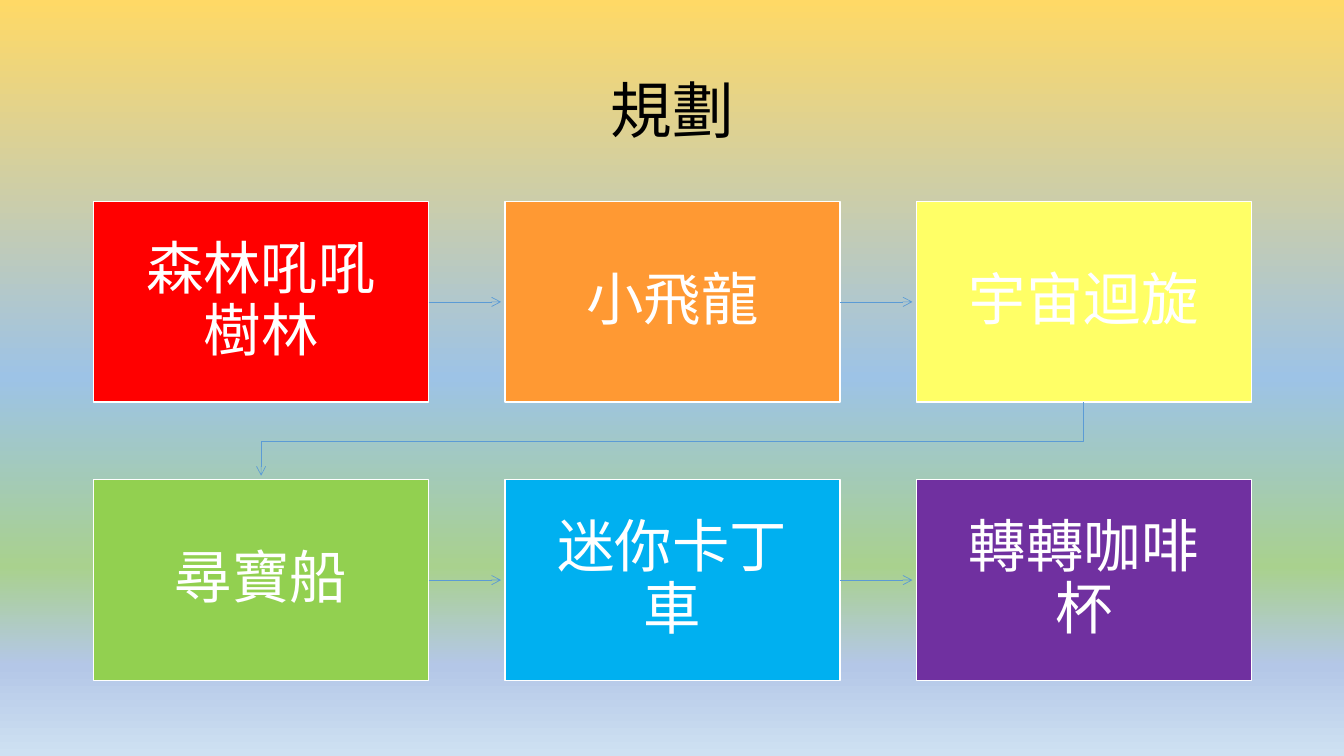
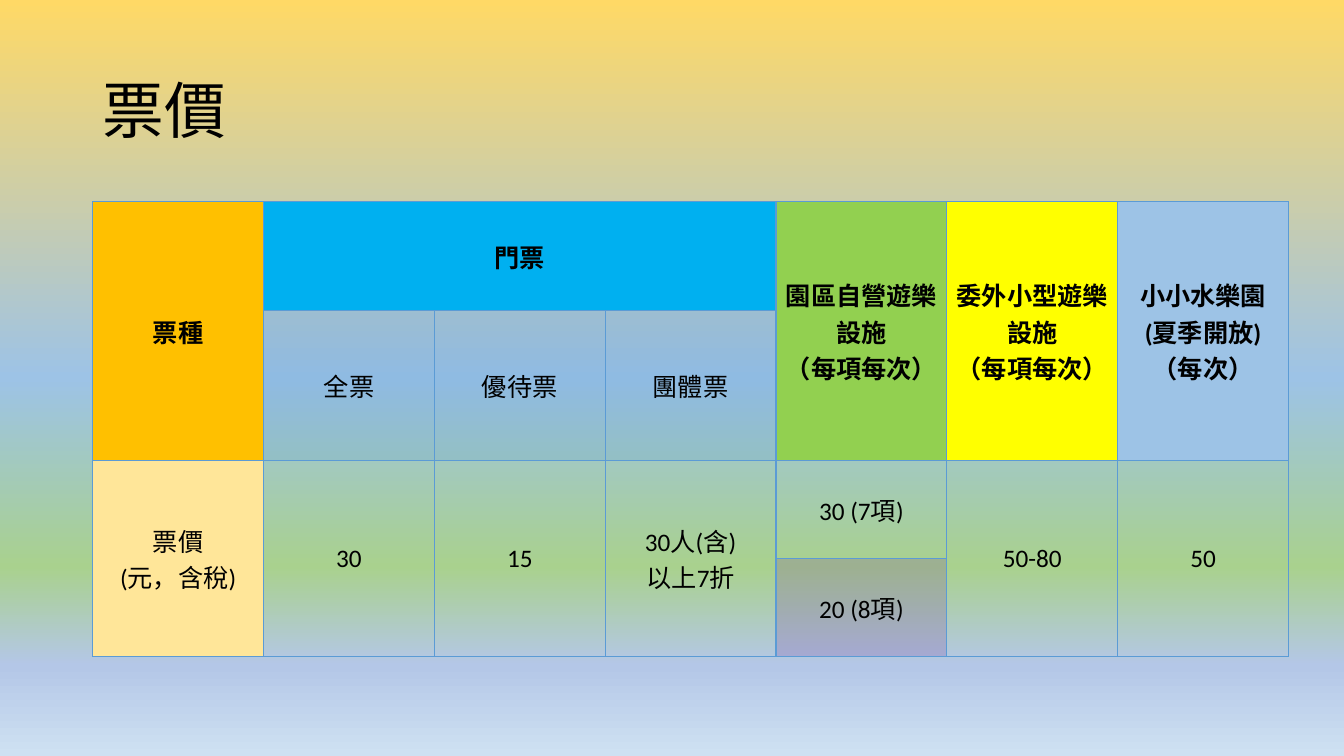
from lxml import etree
from pptx import Presentation
from pptx.dml.color import RGBColor
from pptx.enum.shapes import MSO_CONNECTOR, MSO_SHAPE
from pptx.enum.text import MSO_ANCHOR, PP_ALIGN
from pptx.oxml.ns import qn
from pptx.util import Inches, Pt

STRAIGHT = MSO_CONNECTOR.STRAIGHT
RECTANGLE = MSO_SHAPE.RECTANGLE
MIDDLE = MSO_ANCHOR.MIDDLE
LEFT, CENTER = PP_ALIGN.LEFT, PP_ALIGN.CENTER

BLACK, WHITE, BLUE = "000000", "FFFFFF", "5B9BD5"
PURPLE, GREEN, CYAN = "7030A0", "92D050", "00B0F0"
SKY = [(0, "FFD966"), (50, "9DC3E6"), (75, "A9D18E"), (88, "B4C7E7"), (100, "CEE1F2")]

RIDES = [
    [("森林吼吼樹林", "FF0000"), ("小飛龍", "FF9933"), ("宇宙迴旋", "FFFF66")],
    [("尋寶船", GREEN), ("迷你卡丁車", CYAN), ("轉轉咖啡杯", PURPLE)],
]

ROW_HEIGHTS = [1.08, 1.49, 0.97, 0.97]
HEADINGS = [
    (0, 0, 2, 1, "票種", "FFC000"),
    (0, 1, 1, 3, "門票", CYAN),
    (0, 4, 2, 1, "園區自營遊樂設施\n（每項每次）", GREEN),
    (0, 5, 2, 1, "委外小型遊樂設施\n（每項每次）", "FFFF00"),
    (0, 6, 2, 1, "小小水樂園\n(夏季開放)\n（每次）", "9DC3E6"),
]
PRICES = [
    (1, 1, 1, 1, "全票", BLUE, 20),
    (1, 2, 1, 1, "優待票", BLUE, 20),
    (1, 3, 1, 1, "團體票", BLUE, 20),
    (2, 0, 2, 1, "票價\n(元，含稅)", "FFE699"),
    (2, 1, 2, 1, "30"),
    (2, 2, 2, 1, "15"),
    (2, 3, 2, 1, "30人(含)\n以上7折"),
    (2, 4, 1, 1, "30 (7項)"),
    (2, 5, 2, 1, "50-80"),
    (2, 6, 2, 1, "50"),
    (3, 4, 1, 1, "20 (8項)", PURPLE, 20),
]


def color(code):
    return RGBColor.from_string(code)


class Deck:
    font = "Calibri"
    left, top = 0.93, 2
    card_width, card_height = 3.32, 1.99
    column_step, row_step = 4.08, 2.76
    arrow_stop = 0.04

    def __init__(self):
        self.deck = Presentation()
        self.deck.slide_width = Inches(13.33)
        self.deck.slide_height = Inches(7.5)
        self.paint_background()

    def paint_background(self):
        master = self.deck.slide_master
        fill = master.background.fill
        fill.gradient()
        fill.gradient_angle = 270
        stops = master.element.cSld.find(".//" + qn("a:gsLst"))
        for stop in list(stops):
            stops.remove(stop)
        for position, code in SKY:
            stop = etree.SubElement(stops, qn("a:gs"), pos=str(position * 1000))
            etree.SubElement(stop, qn("a:srgbClr"), val=code)

    def add_page(self, title, align):
        self.page = self.deck.slides.add_slide(self.deck.slide_layouts[6])
        box = self.page.shapes.add_textbox(
            Inches(0.92), Inches(0.4), Inches(11.5), Inches(1.45))
        box.text_frame.word_wrap = True
        box.text_frame.vertical_anchor = MIDDLE
        self.set_text(box.text_frame, title, 44, BLACK, align, spacing=0.9)

    def set_text(self, frame, text, size, code, align=CENTER, bold=False, spacing=1.0):
        para = frame.paragraphs[0]
        para.text = text
        para.alignment = align
        para.line_spacing = spacing
        para.font.name = self.font
        para.font.size = Pt(size)
        para.font.bold = bold
        para.font.color.rgb = color(code)

    def corner(self, row, column):
        return self.left + column * self.column_step, self.top + row * self.row_step

    def card(self, row, column, text, code):
        x, y = self.corner(row, column)
        box = self.page.shapes.add_shape(
            RECTANGLE, Inches(x), Inches(y),
            Inches(self.card_width), Inches(self.card_height))
        box.shadow.inherit = False
        box.fill.solid()
        box.fill.fore_color.rgb = color(code)
        box.line.color.rgb = color(WHITE)
        box.line.width = Pt(1)
        frame = box.text_frame
        frame.word_wrap = True
        frame.vertical_anchor = MIDDLE
        frame.margin_left = frame.margin_right = Inches(0.32)
        frame.margin_top = frame.margin_bottom = Inches(0.32)
        self.set_text(frame, text, 41, WHITE, spacing=0.9)

    def style_arrow(self, line):
        line.color.rgb = color(BLUE)
        line.width = Pt(0.5)
        etree.SubElement(line._get_or_add_ln(), qn("a:tailEnd"), type="arrow")

    def arrow_right(self, row, column):
        x, y = self.corner(row, column)
        start = x + self.card_width
        end = x + self.column_step - self.arrow_stop
        middle = Inches(y + self.card_height / 2)
        arrow = self.page.shapes.add_connector(
            STRAIGHT, Inches(start), middle, Inches(end), middle)
        self.style_arrow(arrow.line)
        etree.SubElement(arrow._element.spPr, qn("a:effectLst"))

    def arrow_to_next_row(self, row, last_column):
        x, y = self.corner(row, last_column)
        start = x + self.card_width / 2
        end = self.left + self.card_width / 2
        bottom = y + self.card_height
        next_top = y + self.row_step
        turn = (bottom + next_top) / 2
        points = [(start, turn), (end, turn), (end, next_top - self.arrow_stop)]
        builder = self.page.shapes.build_freeform(Inches(start), Inches(bottom))
        builder.add_line_segments(
            [(Inches(px), Inches(py)) for px, py in points], close=False)
        arrow = builder.convert_to_shape()
        arrow.shadow.inherit = False
        arrow.fill.background()
        self.style_arrow(arrow.line)

    def table(self, columns, row_heights):
        frame = self.page.shapes.add_table(
            len(row_heights), columns, Inches(0.92), Inches(self.top),
            Inches(11.86), Inches(sum(row_heights)))
        table = frame.table
        table.first_row = table.horz_banding = False
        for column in table.columns:
            column.width = Inches(11.86 / columns)
        for row, height in zip(table.rows, row_heights):
            row.height = Inches(height)
        for cell in table.iter_cells():
            cell.fill.background()
            self.border(cell)
        return table

    def border(self, cell):
        properties = cell._tc.get_or_add_tcPr()
        for index, side in enumerate(("lnL", "lnR", "lnT", "lnB")):
            line = etree.Element(qn("a:" + side), w=str(Pt(1)))
            fill = etree.SubElement(line, qn("a:solidFill"))
            etree.SubElement(fill, qn("a:srgbClr"), val=BLUE)
            properties.insert(index, line)

    def cell(self, table, row, column, rows, columns, text,
             code=None, opacity=100, bold=False):
        cell = table.cell(row, column)
        if rows * columns > 1:
            cell.merge(table.cell(row + rows - 1, column + columns - 1))
        cell.vertical_anchor = MIDDLE
        cell.margin_left = cell.margin_right = Inches(0.03)
        cell.margin_top = cell.margin_bottom = Inches(0.03)
        self.set_text(cell.text_frame, text, 18, BLACK, bold=bold)
        if code:
            cell.fill.solid()
            cell.fill.fore_color.rgb = color(code)
            if opacity < 100:
                tint = cell._tc.tcPr.find(qn("a:solidFill")).find(qn("a:srgbClr"))
                etree.SubElement(tint, qn("a:alpha"), val=str(opacity * 1000))


def build_plan(deck):
    deck.add_page("規劃", CENTER)
    for row, rides in enumerate(RIDES):
        for column, (name, code) in enumerate(rides):
            deck.card(row, column, name, code)
            if column < len(rides) - 1:
                deck.arrow_right(row, column)
    deck.arrow_to_next_row(0, len(RIDES[0]) - 1)


def build_prices(deck):
    deck.add_page("票價", LEFT)
    table = deck.table(7, ROW_HEIGHTS)
    for heading in HEADINGS:
        deck.cell(table, *heading, bold=True)
    for price in PRICES:
        deck.cell(table, *price)


def main():
    deck = Deck()
    build_plan(deck)
    build_prices(deck)
    deck.deck.save("out.pptx")


if __name__ == "__main__":
    main()
